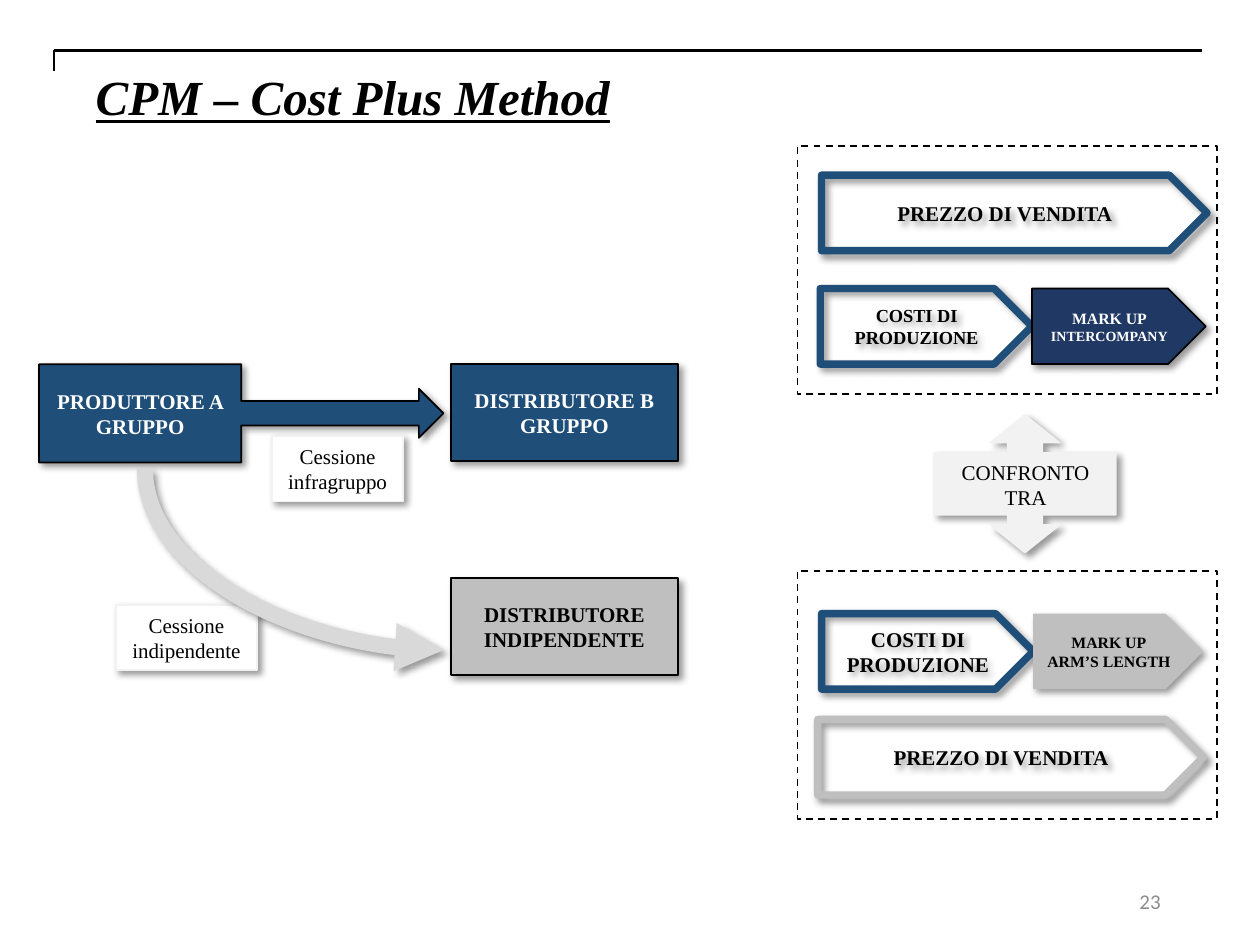
from dataclasses import dataclass

from lxml.etree import SubElement
from pptx import Presentation
from pptx.dml.color import RGBColor
from pptx.enum.dml import MSO_LINE
from pptx.enum.shapes import MSO_CONNECTOR, MSO_SHAPE
from pptx.enum.text import MSO_ANCHOR, PP_ALIGN
from pptx.oxml.ns import qn
from pptx.util import Inches, Pt

COLUMNS, ROWS = 100, 75
WIDTH, HEIGHT = Inches(10), Inches(7.5)
SERIF = "Times New Roman"
BLACK, WHITE, BLUE, NAVY = "000000", "FFFFFF", "1F4E79", "203864"
SILVER, CURVE_GRAY, PALE, NUMBER_GRAY = "BFBFBF", "D9D9D9", "F2F2F2", "8C8C8C"
RECTANGLE, PENTAGON = MSO_SHAPE.RECTANGLE, MSO_SHAPE.PENTAGON


@dataclass(frozen=True)
class Block:
    """A shape placed in grid columns and rows, with its style and text."""
    left: float
    top: float
    width: float
    height: float
    kind: MSO_SHAPE = RECTANGLE
    fill: str | None = None
    line: str | None = BLACK
    weight: float = 1
    lines: tuple[str, ...] = ()
    sizes: tuple[float, ...] = (12,)
    color: str = BLACK
    bold: bool = True
    adjustments: tuple[float, ...] = ()
    rotation: float = 0
    dashed: bool = False
    shadow: bool = True


def column(count: float) -> int:
    """Return the length of a number of grid columns."""
    return round(WIDTH * count / COLUMNS)


def row(count: float) -> int:
    """Return the length of a number of grid rows."""
    return round(HEIGHT * count / ROWS)


def rgb(color: str) -> RGBColor:
    """Turn a hex string into a colour."""
    return RGBColor.from_string(color)


def set_shadow(shape, visible: bool) -> None:
    """Give a shape the soft lower-right shadow, or none at all."""
    properties = shape._element.spPr
    effects = SubElement(properties, qn("a:effectLst"))
    if visible:
        outer = SubElement(effects, qn("a:outerShdw"), blurRad=str(Pt(4)), dist=str(Pt(3)),
                           dir="2700000", algn="tl", rotWithShape="0")
        tone = SubElement(outer, qn("a:srgbClr"), val=BLACK)
        SubElement(tone, qn("a:alpha"), val="40000")


def write(shape, lines, sizes=(12,), color=BLACK, bold=False, font=SERIF,
          align=PP_ALIGN.CENTER, anchor=MSO_ANCHOR.MIDDLE) -> None:
    """Write one paragraph per line in a shape; the last size repeats."""
    frame = shape.text_frame
    frame.word_wrap = True
    frame.vertical_anchor = anchor
    frame.text = "\n".join(lines)
    for index, paragraph in enumerate(frame.paragraphs):
        paragraph.alignment = align
        paragraph.font.name = font
        paragraph.font.size = Pt(sizes[min(index, len(sizes) - 1)])
        paragraph.font.bold = bold
        paragraph.font.color.rgb = rgb(color)


def draw_block(slide, block: Block) -> None:
    """Draw one block."""
    shape = slide.shapes.add_shape(block.kind, column(block.left), row(block.top),
                                   column(block.width), row(block.height))
    shape.rotation = block.rotation
    for index, value in enumerate(block.adjustments):
        shape.adjustments[index] = value
    if block.fill:
        shape.fill.solid()
        shape.fill.fore_color.rgb = rgb(block.fill)
    else:
        shape.fill.background()
    if block.line:
        shape.line.color.rgb = rgb(block.line)
        shape.line.width = Pt(block.weight)
        if block.dashed:
            shape.line.dash_style = MSO_LINE.DASH
    else:
        shape.line.fill.background()
    set_shadow(shape, block.shadow)
    if block.lines:
        write(shape, block.lines, block.sizes, block.color, block.bold)


def draw_line(slide, start, end, color=BLACK, weight=1.5, kind=MSO_CONNECTOR.STRAIGHT,
              shadow=False):
    """Draw a connector between two grid points and return it."""
    connector = slide.shapes.add_connector(kind, column(start[0]), row(start[1]),
                                           column(end[0]), row(end[1]))
    connector.line.color.rgb = rgb(color)
    connector.line.width = Pt(weight)
    set_shadow(connector, shadow)
    return connector


def draw_curve(slide) -> None:
    """Draw the quarter-curve arrow to the independent distributor."""
    curve = draw_line(slide, (30.55, 32.55), (16.15, 56.25), CURVE_GRAY, 9.25,
                      MSO_CONNECTOR.CURVE, True)
    properties = curve._element.spPr
    properties.find(qn("a:xfrm")).set("rot", "16200000")
    properties.find(qn("a:prstGeom")).set("prst", "curvedConnector2")
    SubElement(properties.find(qn("a:ln")), qn("a:tailEnd"), type="triangle")


def add_text(slide, left, top, width, height, lines, **style) -> None:
    """Add a text box placed on the grid."""
    box = slide.shapes.add_textbox(column(left), row(top), column(width), row(height))
    write(box, lines, **style)


def panel(top: float) -> Block:
    """Return a dashed comparison panel."""
    return Block(63.3, top, 33.3, 19.7, fill=WHITE, dashed=True, shadow=False)


def company(top: float, fill: str, color: str, text: str) -> Block:
    """Return a distributor box."""
    return Block(35.8, top, 18, 7.7, fill=fill, lines=(text,), color=color)


def note(left: float, top: float, width: float, *lines: str) -> Block:
    """Return a white caption for a sale."""
    return Block(left, top, width, 5.2, fill=WHITE, line=PALE, lines=lines, bold=False)


def outline(left: float, top: float, width: float, text: str, color=BLUE, size=12) -> Block:
    """Return a hollow pentagon with a thick border."""
    return Block(left, top, width, 6, PENTAGON, line=color, weight=4.25,
                 lines=(text,), sizes=(size,))


FLOW = (
    company(28.9, BLUE, WHITE, "DISTRIBUTORE B GRUPPO"),
    note(21.6, 34.6, 10.4, "Cessione infragruppo"),
    note(9.2, 48, 11.2, "Cessione", "indipendente"),
    Block(3.1, 28.9, 32.1, 7.8, MSO_SHAPE.RIGHT_ARROW_CALLOUT, BLUE,
          lines=("PRODUTTORE A GRUPPO",), color=WHITE, adjustments=(0.25, 0.25, 0.25, 0.5)),
    company(45.9, SILVER, BLACK, "DISTRIBUTORE INDIPENDENTE"),
)
COMPARISON = (
    panel(45.3),
    Block(75.9, 31.2, 10.9, 14.4, MSO_SHAPE.LEFT_RIGHT_ARROW_CALLOUT, PALE, PALE,
          adjustments=(0.25, 0.25, 0.2, 0.45), rotation=90),
    outline(64.9, 57.1, 30.6, "PREZZO DI VENDITA", SILVER),
    outline(65.2, 48.7, 16.8, "COSTI DI PRODUZIONE"),
    Block(82, 48.7, 13.5, 6, PENTAGON, SILVER, None,
          lines=("MARK UP", "ARM’S LENGTH"), sizes=(9,)),
    panel(11.6),
    outline(65.2, 13.9, 30.6, "PREZZO DI VENDITA"),
    outline(65.1, 22.9, 16.8, "COSTI DI PRODUZIONE", size=10.5),
    Block(81.9, 22.9, 13.8, 6, PENTAGON, NAVY,
          lines=("MARK UP", "INTERCOMPANY"), sizes=(9, 8), color=WHITE),
)


def main() -> None:
    """Build and save the slide."""
    presentation = Presentation()
    presentation.slide_width, presentation.slide_height = WIDTH, HEIGHT
    slide = presentation.slides.add_slide(presentation.slide_layouts[5])
    title = slide.shapes.title
    title.left, title.top = column(6.6), row(4.8)
    title.width, title.height = column(61.5), row(5.7)
    write(title, ("CPM – Cost Plus Method",), (28,), bold=True,
          align=PP_ALIGN.LEFT, anchor=MSO_ANCHOR.TOP)
    title_font = title.text_frame.paragraphs[0].font
    title_font.italic = title_font.underline = True
    for end in ((95.4, 4), (4.3, 5.6)):
        draw_line(slide, (4.3, 4), end)
    for block in FLOW:
        draw_block(slide, block)
    draw_curve(slide)
    for block in COMPARISON:
        draw_block(slide, block)
    add_text(slide, 74.2, 36, 14.4, 5, ("CONFRONTO TRA",), anchor=MSO_ANCHOR.TOP)
    add_text(slide, 70.6, 69.5, 22.5, 4, ("23",), color=NUMBER_GRAY, font="Calibri",
             align=PP_ALIGN.RIGHT)
    presentation.save("out.pptx")


if __name__ == "__main__":
    main()
